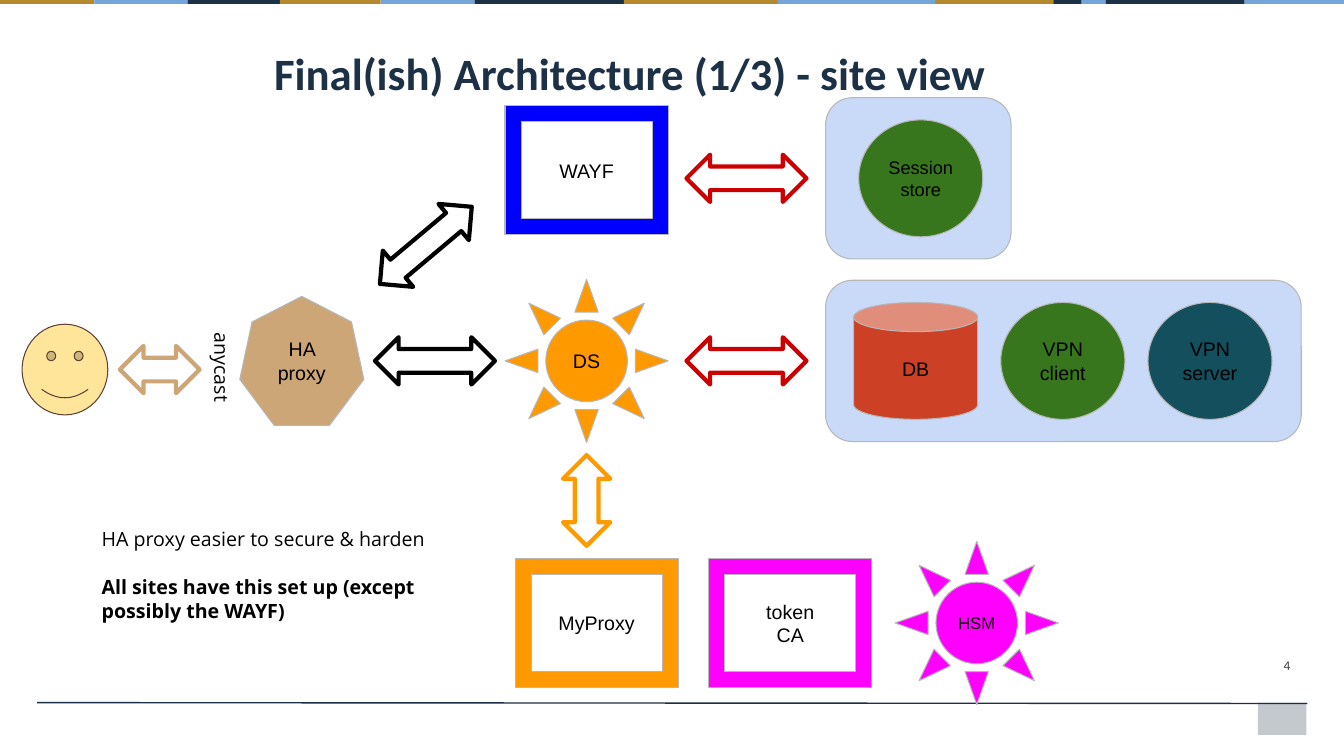
from itertools import pairwise
from lxml.etree import SubElement
from pptx import Presentation
from pptx.dml.color import RGBColor
from pptx.enum.shapes import MSO_CONNECTOR, MSO_SHAPE as Kind
from pptx.enum.text import MSO_ANCHOR as Anchor, PP_ALIGN as Align
from pptx.oxml.ns import qn
from pptx.util import Pt

THEME = {
    "black": "000000", "white": "FFFFFF", "navy": "1C3046", "rule": "1D2F45",
    "gold": "B5892D", "sky": "75A5D8", "panel": "C9DAF8", "outline": "B7B7B7",
    "tan": "CCA677", "rust": "CC4125", "teal": "134F5C", "green": "38761D",
    "orange": "FF9900", "magenta": "FF00FF", "blue": "0000FF", "red": "CC0000",
    "face": "FFE599", "face_line": "5D4037", "number": "3C3C3C",
    "title_size": 32, "label_size": 14, "session_size": 13, "hsm_size": 12, "number_size": 9.5,
    "title_font": "Calibri", "label_font": "Arial", "note_font": "Open Sans",
}

BAND_EDGES = [0, 67.5, 134, 200, 272, 339, 445.7, 555.8, 668, 752.4, 772.6, 789.8, 889, 960]
BAND_COLOURS = ["gold", "sky", "navy", "gold", "sky", "navy", "gold", "sky", "gold", "navy", "sky", "navy", "sky"]

SIZES = {
    Kind.FRAME: (116.6, 92.2), Kind.SUN: (116.6, 116.6), Kind.HEPTAGON: (88.6, 92.2),
    Kind.OVAL: (88.6, 83.5), Kind.CAN: (88.6, 83.5),
}
MIDDLE, BOTTOM, SESSION_ROW = 257.8, 445, 127.4
HUB, STORE, STORE_STEP = 419, 654.1, 105.1

PANELS = [(759.6, MIDDLE, 339.8, 115.2), (656, SESSION_ROW, 132.5, 115.2)]
NODES = [
    (Kind.HEPTAGON, "HA proxy", 215.6, MIDDLE, "tan", "label_size"),
    (Kind.SUN, "DS", HUB, MIDDLE, "orange", "label_size"),
    (Kind.FRAME, "WAYF", HUB, 121.7, "blue", "label_size"),
    (Kind.CAN, "DB", STORE, MIDDLE, "rust", "label_size"),
    (Kind.OVAL, "VPN client", STORE + STORE_STEP, MIDDLE, "green", "label_size"),
    (Kind.OVAL, "VPN server", STORE + 2 * STORE_STEP, MIDDLE, "teal", "label_size"),
    (Kind.OVAL, "Session store", 657.7, SESSION_ROW, "green", "session_size"),
    (Kind.FRAME, "MyProxy", 426.2, BOTTOM, "orange", "label_size"),
    (Kind.FRAME, "token\nCA", 564.5, BOTTOM, "magenta", "label_size"),
    (Kind.SUN, "HSM", 697.7, BOTTOM, "magenta", "hsm_size"),
]
ARROW_HEIGHT = 33.8
ARROWS = [
    (114.1, 264, 56.9, 0, "tan"),
    (310.7, MIDDLE, 85.7, 0, "black"),
    (304.2, 175.3, 85.7, 320, "black"),
    (533.2, MIDDLE, 85.7, 0, "red"),
    (533.2, SESSION_ROW, 85.7, 0, "red"),
    (HUB, 357.5, 64.8, 90, "orange"),
]
NOTES = ["HA proxy easier to secure & harden", "All sites have this set up (except possibly the WAYF)"]


def colour(name):
    return RGBColor.from_string(THEME[name])


def add_shape(kind, x, y, width, height, fill, line=None, weight=0.75):
    shape = slide.shapes.add_shape(kind, Pt(x - width / 2), Pt(y - height / 2), Pt(width), Pt(height))
    shape.shadow.inherit = False
    shape.fill.solid()
    shape.fill.fore_color.rgb = colour(fill)
    if line:
        shape.line.color.rgb = colour(line)
        shape.line.width = Pt(weight)
    else:
        shape.line.fill.background()
    return shape


def write(box, text, font, size, ink="black", align=Align.LEFT, anchor=Anchor.TOP, inset=7.2, bold=False):
    frame = box.text_frame
    frame.word_wrap = True
    frame.vertical_anchor = anchor
    frame.margin_left = frame.margin_right = frame.margin_top = frame.margin_bottom = Pt(inset)
    frame.text = text
    for para in frame.paragraphs:
        para.alignment = align
        for span in para.runs:
            span.font.name = THEME[font]
            span.font.size = Pt(THEME[size])
            span.font.bold = bold
            span.font.color.rgb = colour(ink)
    return frame.paragraphs


def add_text(left, top, width, height, *content, **style):
    box = slide.shapes.add_textbox(Pt(left), Pt(top), Pt(width), Pt(height))
    return box, write(box, *content, **style)


deck = Presentation()
deck.slide_width, deck.slide_height = Pt(960), Pt(540)
slide = deck.slides.add_slide(deck.slide_layouts[6])

corner = add_shape(Kind.RECTANGLE, 915.8, 513.4, 34.6, 23, "rule")
tint = corner.fill._xPr.find(qn("a:solidFill"))[0]
SubElement(tint, qn("a:alpha"), val="26000")
for (start, end), name in zip(pairwise(BAND_EDGES), BAND_COLOURS):
    add_shape(Kind.RECTANGLE, (start + end) / 2, 1.45, end - start, 2.9, name)

footer = slide.shapes.add_connector(MSO_CONNECTOR.STRAIGHT, Pt(933.8), Pt(502.5), Pt(26.6), Pt(501.9))
footer.line.color.rgb = colour("rule")
footer.line.width = Pt(1)
SubElement(footer._element.spPr, qn("a:effectLst"))

for panel in PANELS:
    add_shape(Kind.ROUNDED_RECTANGLE, *panel, "panel", "outline")

title_box, title = add_text(186.5, 17.3, 679.7, 64.8, "Final(ish) Architecture (1/3) - site view",
                            "title_font", "title_size", ink="navy", inset=9.4, bold=True)
title[0].line_spacing = 1.15

for kind, label, x, y, fill, size in NODES:
    node = add_shape(kind, x, y, *SIZES[kind], fill, "outline")
    write(node, label, "label_font", size, align=Align.CENTER, anchor=Anchor.MIDDLE)

for x, y, length, angle, line in ARROWS:
    arrow = add_shape(Kind.LEFT_RIGHT_ARROW, x, y, length, ARROW_HEIGHT, "white", line, 3)
    arrow.rotation = angle

add_shape(Kind.SMILEY_FACE, 46.4, 264, 61.2, 64.8, "face", "face_line")

anycast, _ = add_text(118.8, 254.2, 79.2, 31.7, "anycast", "note_font", "label_size")
anycast.rotation = 90
_, notes = add_text(65.5, 369.4, 254.2, 82.1, "\n".join(NOTES), "note_font", "label_size")
notes[1].space_before = Pt(17.5)
notes[1].runs[0].font.bold = True
add_text(683.3, 463.7, 245.5, 22.3, "4", "title_font", "number_size",
         ink="number", align=Align.RIGHT, inset=7.2)

deck.save("out.pptx")
